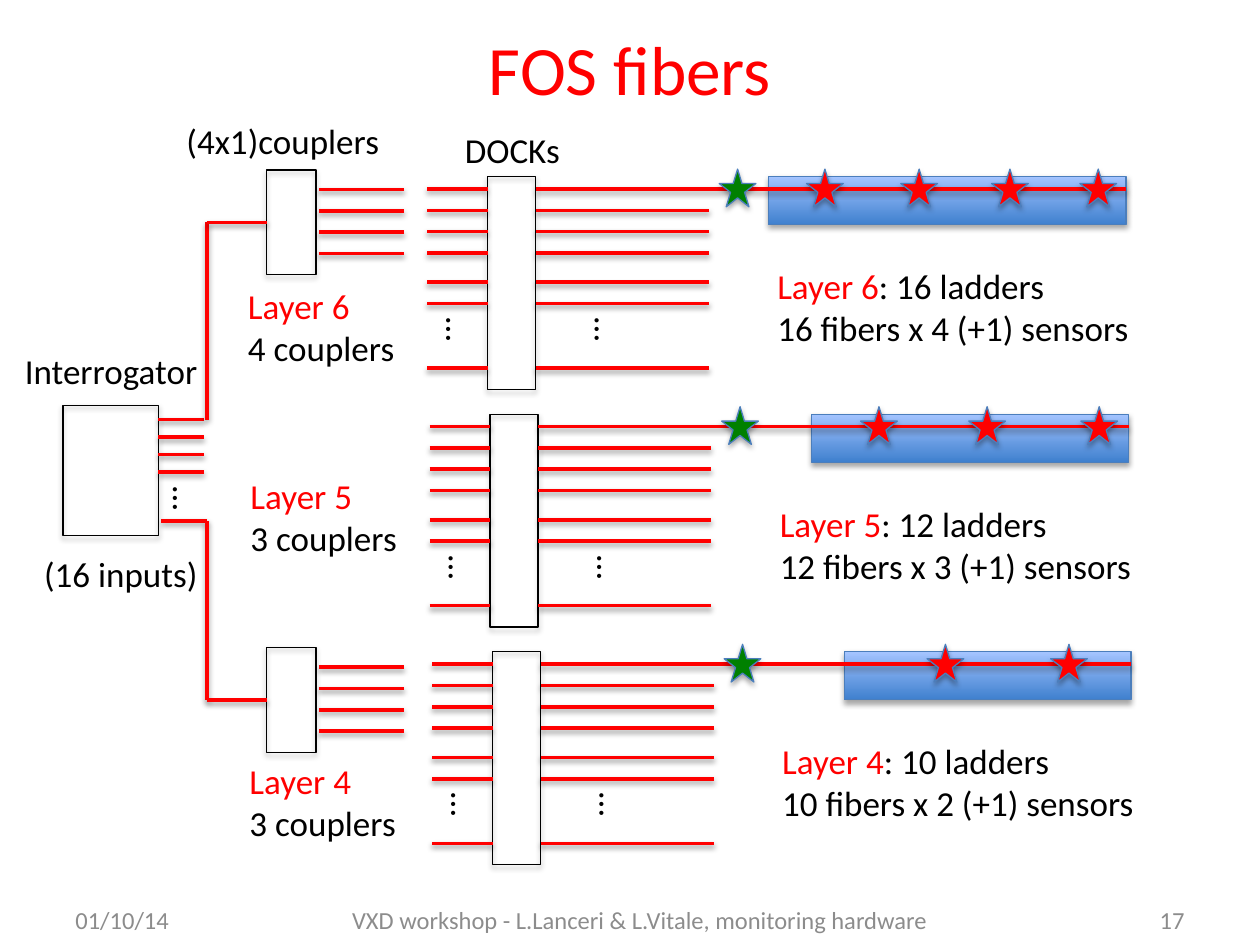
from lxml.etree import SubElement
from pptx import Presentation
from pptx.dml.color import RGBColor
from pptx.enum.shapes import MSO_CONNECTOR, MSO_SHAPE
from pptx.enum.text import MSO_ANCHOR, MSO_AUTO_SIZE, PP_ALIGN
from pptx.oxml.ns import qn
from pptx.util import Cm, Pt

RED = RGBColor(0xFF, 0x00, 0x00)
GREEN = RGBColor(0x00, 0x80, 0x00)
BLACK = RGBColor(0x00, 0x00, 0x00)
GREY = RGBColor(0x8C, 0x8C, 0x8C)
EDGE = RGBColor(0x4B, 0x7E, 0xBC)
DARK = RGBColor(0x3F, 0x80, 0xCE)
LIGHT = RGBColor(0xA4, 0xC4, 0xFF)

LABEL = {"word_wrap": False, "auto_size": MSO_AUTO_SIZE.SHAPE_TO_FIT_TEXT}
FOOT = {"word_wrap": True, "vertical_anchor": MSO_ANCHOR.MIDDLE}


def put(item, values):
    """Set each named attribute of item."""
    for name, value in values.items():
        setattr(item, name, value)


class Board:
    def __init__(self, slide, face="Calibri", size=20):
        self.slide, self.face, self.size = slide, face, size

    def style(self, font, size, color):
        put(font, {"name": self.face, "size": Pt(size)})
        font.color.rgb = color

    def title(self, text, *box):
        shape = self.slide.shapes.title
        put(shape, dict(zip(("left", "top", "width", "height"), map(Cm, box))))
        shape.text_frame.vertical_anchor = MSO_ANCHOR.MIDDLE
        shape.text_frame.text = text
        self.style(shape.text_frame.paragraphs[0].runs[0].font, 39.6, RED)

    def text(self, lines, *box, form=LABEL, align=PP_ALIGN.LEFT, size=None, turn=0):
        """Write lines, each a list of (text, colour) runs."""
        shape = self.slide.shapes.add_textbox(*map(Cm, box))
        shape.rotation = turn
        frame = shape.text_frame
        put(frame, form)
        for i, line in enumerate(lines):
            para = frame.add_paragraph() if i else frame.paragraphs[0]
            para.alignment = align
            for words, color in line:
                run = para.add_run()
                run.text = words
                self.style(run.font, size or self.size, color)

    def dots(self, x, y):
        self.text([[("…", BLACK)]], x, y, 1.02, 1.12, turn=90)

    def shade(self, effects, alpha):
        shadow = SubElement(effects, qn("a:outerShdw"), blurRad=str(Pt(3.1)),
                            dist=str(Pt(1.8)), dir="5400000", rotWithShape="0")
        color = SubElement(shadow, qn("a:srgbClr"), val="000000")
        SubElement(color, qn("a:alpha"), val=str(alpha * 1000))

    def shape(self, kind, *box, edge=BLACK):
        shape = self.slide.shapes.add_shape(kind, *map(Cm, box))
        shape.shadow.inherit = False
        shape.line.color.rgb = edge
        shape.line.width = Pt(0.75)
        self.shade(shape._element.spPr.find(qn("a:effectLst")), 35)
        return shape

    def box(self, *box):
        shape = self.shape(MSO_SHAPE.RECTANGLE, *box)
        shape.fill.background()
        return shape

    def ladder(self, *box):
        fill = self.shape(MSO_SHAPE.RECTANGLE, *box, edge=EDGE).fill
        fill.gradient()
        fill.gradient_angle = 90
        for stop, color, place in zip(fill.gradient_stops, (DARK, LIGHT), (0, 1)):
            stop.color.rgb = color
            stop.position = place

    def star(self, x, y, color):
        fill = self.shape(MSO_SHAPE.STAR_5_POINT, x, y, 0.74, 0.76, edge=EDGE).fill
        fill.solid()
        fill.fore_color.rgb = color

    def fiber(self, x1, y1, x2, y2, goal=None):
        """Draw a red line; goal is a box whose left side it joins."""
        line = self.slide.shapes.add_connector(
            MSO_CONNECTOR.STRAIGHT, *map(Cm, (x1, y1, x2, y2)))
        if goal is not None:
            line.end_connect(goal, 1)
        line.line.color.rgb = RED
        line.line.width = Pt(2)
        self.shade(SubElement(line._element.spPr, qn("a:effectLst")), 38)


def layer(board, row, name, count, bar, stars):
    """Draw a dock with its fibers, ladder and sensors."""
    dx, top = 0.05 * row, 3.56 + 4.79 * row
    dock, end = 9.83 + dx, 22.7 + dx
    board.ladder(bar, top, end - bar, 0.97)
    board.box(dock, top, 0.97, 4.29)
    for i, gap in enumerate((0.25, 0.68, 1.11, 1.54, 2.13, 2.56, 3.86)):
        y = top + gap
        board.fiber(dock - 1.22, y, dock, y)
        board.fiber(dock + 0.97, y, dock + 4.46 if i else end, y)
    for x in stars:
        board.star(x, top - 0.15, RED)
    board.star(14.5 + dx, top - 0.15, GREEN)
    for x in (8.76, 11.75):
        board.dots(x + dx, top + 2.54)
    board.text([[(name, RED), (f": {count} ladders", BLACK)],
                [(f"{count} fibers x {len(stars)} (+1) sensors", BLACK)]],
               15.42 + dx, top + 1.65, 7.65, 1.96)


def coupler(board, top, start):
    """Draw a coupler, its four outputs and its feed from height start."""
    mid = top + 1.055
    body = board.box(5.38, top, 0.99, 2.11)
    board.fiber(4.17, start, 4.17, mid)
    board.fiber(4.17, mid, 5.38, mid, body)
    for i in range(4):
        y = top + 0.39 + 0.43 * i
        board.fiber(6.43, y, 8.15, y)


def main():
    deck = Presentation()
    put(deck, {"slide_width": Cm(25.4), "slide_height": Cm(19.05)})
    board = Board(deck.slides.add_slide(deck.slide_layouts[5]))
    board.title("FOS fibers", 1.27, 0.36, 22.86, 2.03)

    layers = (
        ("Layer 6", 16, 15.49, (16.26, 18.16, 19.99, 21.77)),
        ("Layer 5", 12, 16.36, (17.35, 19.53, 21.79)),
        ("Layer 4", 10, 17.02, (18.69, 21.18)),
    )
    for row, data in enumerate(layers):
        layer(board, row, *data)

    board.box(1.27, 8.18, 1.93, 2.62)
    for i in range(4):
        y = 8.46 + 0.35 * i
        board.fiber(3.19, y, 4.11, y)
    board.fiber(3.25, 10.5, 4.17, 10.5)
    board.dots(3.25, 9.5)
    coupler(board, 3.43, 8.46)
    coupler(board, 13.06, 10.5)

    for name, count, x, y in (("Layer 6", 4, 4.75, 5.61),
                              ("Layer 5", 3, 4.8, 9.45),
                              ("Layer 4", 3, 4.78, 15.19)):
        board.text([[(name, RED)], [(f"{count} couplers", BLACK)]], x, y, 3.48, 1.96)

    for words, x, y, wide in (("(4x1)couplers", 3.51, 2.29, 4.42),
                              ("DOCKs", 9.12, 2.46, 2.44),
                              ("Interrogator", 0.25, 6.93, 4.01),
                              ("(16 inputs)", 0.64, 11.02, 3.63)):
        board.text([[(words, BLACK)]], x, y, wide, 1.12)

    for words, x, wide, align in (
            ("01/10/14", 1.27, 4.11, PP_ALIGN.LEFT),
            ("VXD workshop - L.Lanceri & L.Vitale, monitoring hardware",
             5.38, 15.04, PP_ALIGN.CENTER),
            ("17", 20.88, 3.25, PP_ALIGN.RIGHT)):
        board.text([[(words, GREY)]], x, 18.03, wide, 1.02,
                   form=FOOT, align=align, size=14)

    deck.save("out.pptx")


if __name__ == "__main__":
    main()
